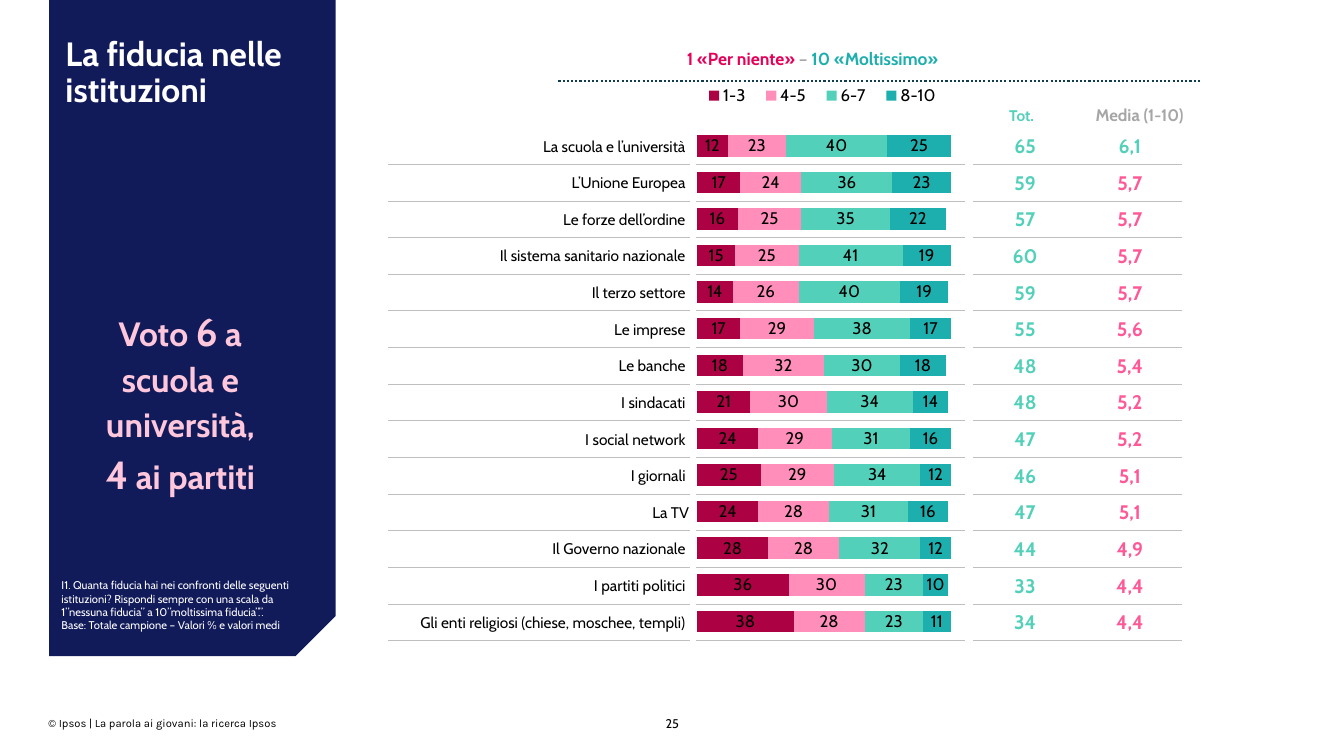
from lxml import etree
from pptx import Presentation
from pptx.chart.data import CategoryChartData
from pptx.dml.color import RGBColor
from pptx.enum.chart import XL_CHART_TYPE, XL_LABEL_POSITION, XL_LEGEND_POSITION
from pptx.enum.dml import MSO_LINE
from pptx.enum.shapes import MSO_CONNECTOR, MSO_SHAPE
from pptx.enum.text import MSO_ANCHOR, PP_ALIGN
from pptx.oxml import parse_xml
from pptx.oxml.ns import nsdecls, qn
from pptx.util import Pt

LEFT, CENTER, RIGHT = PP_ALIGN.LEFT, PP_ALIGN.CENTER, PP_ALIGN.RIGHT
TOP, MIDDLE, BOTTOM = MSO_ANCHOR.TOP, MSO_ANCHOR.MIDDLE, MSO_ANCHOR.BOTTOM
STACKED, LEGEND_TOP = XL_CHART_TYPE.BAR_STACKED, XL_LEGEND_POSITION.TOP
LABEL_CENTER, DOTTED = XL_LABEL_POSITION.CENTER, MSO_LINE.ROUND_DOT

BLACK = RGBColor(0x00, 0x00, 0x00)
WHITE = RGBColor(0xFF, 0xFF, 0xFF)
NAVY = RGBColor(0x12, 0x1B, 0x5A)
DARK_TEAL = RGBColor(0x10, 0x3C, 0x50)
GREY = RGBColor(0xA6, 0xA6, 0xA6)
CRIMSON = RGBColor(0xAC, 0x01, 0x42)
MAGENTA = RGBColor(0xE5, 0x01, 0x58)
HOT_PINK = RGBColor(0xFE, 0x58, 0x97)
PINK = RGBColor(0xFF, 0x8F, 0xBA)
PALE_PINK = RGBColor(0xFF, 0xC7, 0xDC)
MINT = RGBColor(0x53, 0xD0, 0xB9)
TEAL = RGBColor(0x1D, 0xAF, 0xAD)

FONT = "Cabin"
NO_STYLE = "{2D5ABB26-0587-4C30-8999-92F81FD0307C}"
BANDS = [("1-3", CRIMSON), ("4-5", PINK), ("6-7", MINT), ("8-10", TEAL)]
TRUST = [  # institution, share per band, total of 6-10, mean
    ("La scuola e l’università ", (12, 23, 40, 25), "65", "6,1"),
    ("L’Unione Europea ", (17, 24, 36, 23), "59", "5,7"),
    ("Le forze dell’ordine ", (16, 25, 35, 22), "57", "5,7"),
    ("Il sistema sanitario nazionale ", (15, 25, 41, 19), "60", "5,7"),
    ("Il terzo settore ", (14, 26, 40, 19), "59", "5,7"),
    ("Le imprese ", (17, 29, 38, 17), "55", "5,6"),
    ("Le banche ", (18, 32, 30, 18), "48", "5,4"),
    ("I sindacati ", (21, 30, 34, 14), "48", "5,2"),
    ("I social network ", (24, 29, 31, 16), "47", "5,2"),
    ("I giornali ", (25, 29, 34, 12), "46", "5,1"),
    ("La TV", (24, 28, 31, 16), "47", "5,1"),
    ("Il Governo nazionale ", (28, 28, 32, 12), "44", "4,9"),
    ("I partiti politici ", (36, 30, 23, 10), "33", "4,4"),
    ("Gli enti religiosi (chiese, moschee, templi) ", (38, 28, 23, 11), "34", "4,4"),
]
RULED = (0, 2, 4, 5)


def write(tf, *paragraphs, size, color=BLACK, bold=False, font=FONT, align=LEFT, spacing=None):
    """Fill tf; a paragraph is a string or a list of (text, size, color) runs."""
    for i, para in enumerate(paragraphs):
        p = tf.add_paragraph() if i else tf.paragraphs[0]
        p.alignment = align
        if spacing:
            p.line_spacing = spacing
        for text, run_size, run_color in [(para, size, color)] if isinstance(para, str) else para:
            r = p.add_run()
            r.text = text
            r.font.name, r.font.size, r.font.bold = font, Pt(run_size), bold
            r.font.color.rgb = run_color


def add_box(x, y, w, h, anchor=TOP):
    tf = s.shapes.add_textbox(Pt(x), Pt(y), Pt(w), Pt(h)).text_frame
    tf.word_wrap = True
    tf.vertical_anchor = anchor
    tf.margin_left = tf.margin_right = tf.margin_top = tf.margin_bottom = 0
    return tf


prs = Presentation()
prs.slide_width, prs.slide_height = Pt(960), Pt(540)
s = prs.slides.add_slide(prs.slide_layouts[6])

# Footer
write(add_box(460.8, 510.5, 38.9, 10.8), "25", size=9, align=CENTER, spacing=1.1)
write(add_box(34.6, 511.5, 218.2, 10.8), "© Ipsos | La parola ai giovani: la ricerca Ipsos",
      size=8, font="Karla")

# Stacked bars
data = CategoryChartData()
data.categories = [str(n) for n in range(1, len(TRUST) + 1)]
for i, (band, _) in enumerate(BANDS):
    data.add_series(band, [row[1][i] for row in TRUST])
chart = s.shapes.add_chart(STACKED, Pt(493.9), Pt(10.1), Pt(187.2), Pt(447.8), data).chart
chart.font.name, chart.font.size = FONT, Pt(12)
chart.font.color.rgb = BLACK
chart.has_title = False
chart.has_legend = True
chart.legend.position = LEGEND_TOP
chart.legend.include_in_layout = False
chart.legend.font.name, chart.legend.font.size = FONT, Pt(12)
chart.legend.font.color.rgb = BLACK
chart.category_axis.reverse_order = True
chart.category_axis.visible = False
chart.value_axis.minimum_scale, chart.value_axis.maximum_scale = 0, 100
chart.value_axis.has_major_gridlines = False
chart.value_axis.visible = False
plot = chart.plots[0]
plot.gap_width, plot.overlap = 70, 100
plot.vary_by_categories = False
for series, (_, color) in zip(plot.series, BANDS):
    series.format.fill.solid()
    series.format.fill.fore_color.rgb = color
    labels = series.data_labels
    labels.show_value = True
    labels.position = LABEL_CENTER
    labels.number_format, labels.number_format_is_linked = "#", False
    labels.font.name, labels.font.size = FONT, Pt(12)
    labels.font.color.rgb = BLACK

plot_area = chart._chartSpace.chart.plotArea
legend = chart.legend._element
for part, target, frame in [(plot_area, "<c:layoutTarget val='inner'/>", (0.022, 0.181, 0.968, 0.817)),
                            (legend, "", (0.01, 0.11, 0.98, 0.04))]:
    for old in part.findall(qn("c:layout")):
        part.remove(old)
    modes = "".join(f"<c:{a}Mode val='edge'/>" for a in "xy")
    sizes = "".join(f"<c:{a} val='{v}'/>" for a, v in zip("xywh", frame))
    layout = parse_xml(f"<c:layout {nsdecls('c')}><c:manualLayout>{target}{modes}{sizes}"
                       "</c:manualLayout></c:layout>")
    part.insert(0 if part is plot_area else 1, layout)

# Tables: institutions around the bars, column heading, scale heading
tables = []
for x, y, widths, row_height, count in [
        (277.2, 91.2, [215.7, 4.3, 191.8, 5.8, 74.9, 74.9], 26.18, len(TRUST)),
        (704.2, 66.2, [51.1] * 5, 33.1, 1),
        (450.7, 31, [259.2], 29.5, 1)]:
    table = s.shapes.add_table(count, len(widths), Pt(x), Pt(y), Pt(sum(widths)),
                               Pt(row_height * count)).table
    table.first_row = table.horz_banding = False
    table._tbl.tblPr.find(qn("a:tableStyleId")).text = NO_STYLE
    for column, width in zip(table.columns, widths):
        column.width = Pt(width)
    for row in table.rows:
        row.height = Pt(row_height)
        for cell in row.cells:
            cell.fill.background()
            if len(widths) > 1:
                cell.vertical_anchor = MIDDLE
                cell.margin_left = cell.margin_right = cell.margin_top = Pt(0.7)
                cell.margin_bottom = 0
    tables.append(table)
trust_table, total_heading, scale_heading = tables

for i, (name, _, total, mean) in enumerate(TRUST):
    for j in RULED:
        trust_table.cell(i, j)._tc.get_or_add_tcPr().insert(0, parse_xml(
            f"<a:lnB {nsdecls('a')} w='6350'><a:solidFill><a:srgbClr val='BFBFBF'/>"
            "</a:solidFill></a:lnB>"))
    write(trust_table.cell(i, 0).text_frame, name, size=11, align=RIGHT)
    write(trust_table.cell(i, 4).text_frame, total, size=14, color=MINT, bold=True, align=CENTER)
    write(trust_table.cell(i, 5).text_frame, mean, size=14, color=HOT_PINK if i else MINT,
          bold=True, align=CENTER)
write(total_heading.cell(0, 0).text_frame, "Tot.", size=11, color=MINT, bold=True, align=CENTER)
write(scale_heading.cell(0, 0).text_frame,
      [("1 «Per niente» ", 12.5, MAGENTA), ("–", 12.5, GREY), (" 10 «Moltissimo»", 12.5, TEAL)],
      size=12.5, bold=True, align=CENTER)

# Navy panel
panel = s.shapes.add_shape(MSO_SHAPE.SNIP_1_RECTANGLE, Pt(35.2), 0, Pt(204.5), Pt(468.7))
panel.adjustments[0] = 0.14
panel.shadow.inherit = False
panel.fill.solid()
panel.fill.fore_color.rgb = NAVY
panel.line.fill.background()
panel._element.spPr.find(qn("a:xfrm")).set("flipV", "1")

write(add_box(66.2, 215.3, 125.3, 137.5),
      [("Voto ", 24, PALE_PINK), ("6", 28, PALE_PINK), (" a scuola e università, ", 24, PALE_PINK),
       ("4", 28, PALE_PINK), (" ai partiti", 24, PALE_PINK)],
      size=24, bold=True, align=CENTER, spacing=1.12)
write(add_box(43.9, 412.6, 174.2, 38.9, BOTTOM),
      "I1. Quanta fiducia hai nei confronti delle seguenti istituzioni? Rispondi sempre con "
      "una scala da 1”nessuna fiducia” a 10”moltissima fiducia”.”.",
      "Base: Totale campione – Valori % e valori medi", size=8, color=WHITE)
write(add_box(46.8, 26.6, 189.4, 72.7), "La fiducia nelle istituzioni",
      size=24, color=WHITE, bold=True, spacing=0.9)

# Scale rule and mean heading
rule = s.shapes.add_connector(MSO_CONNECTOR.STRAIGHT, Pt(398.9), Pt(57.6), Pt(856.8), Pt(57.6))
rule.line.color.rgb = DARK_TEAL
rule.line.width = Pt(1.5)
rule.line.dash_style = DOTTED
etree.SubElement(rule._element.spPr, qn("a:effectLst"))
write(add_box(745.9, 74.9, 136.1, 14.4, BOTTOM), "Media (1-10)",
      size=12, color=GREY, bold=True, align=CENTER)

prs.save("out.pptx")
